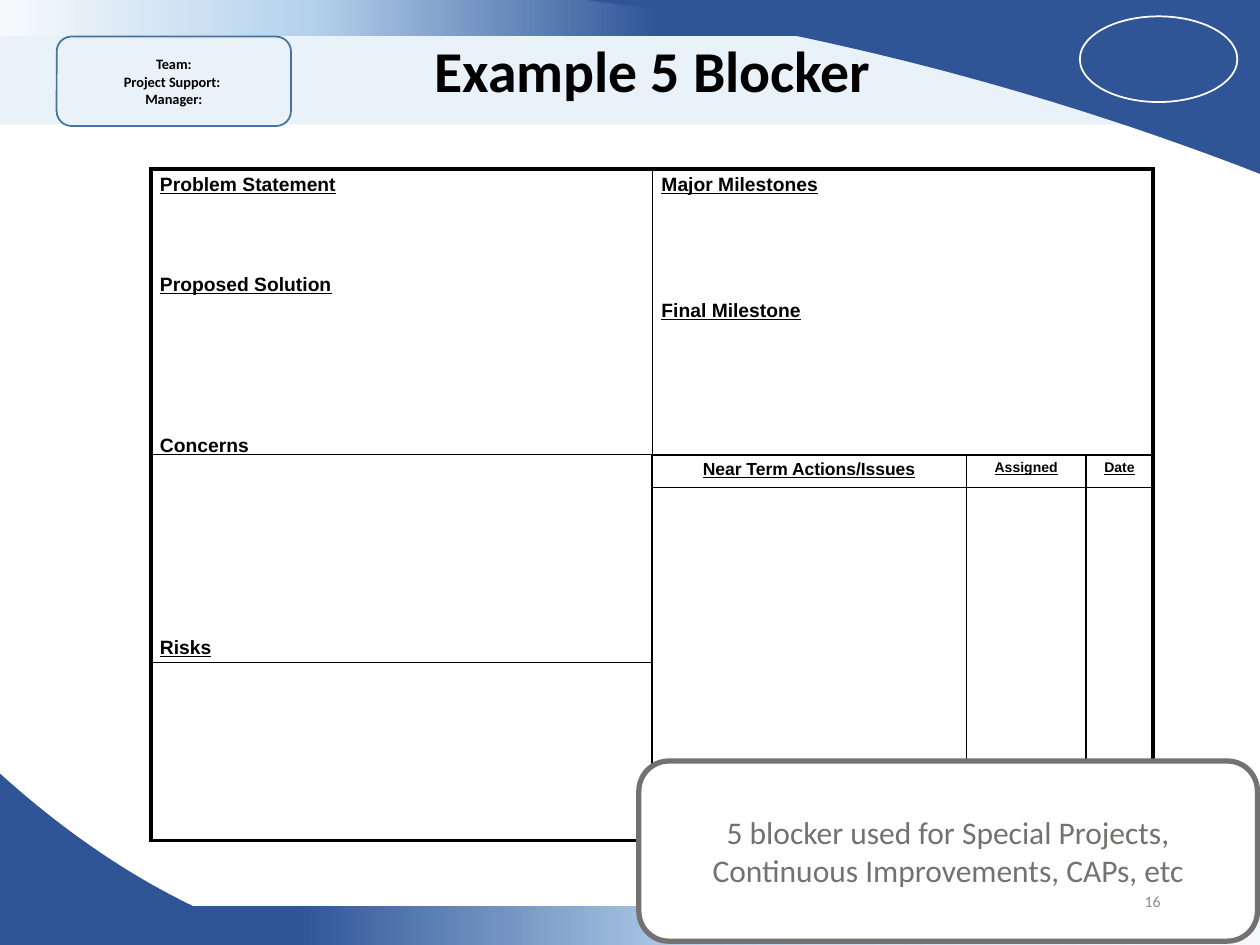
from lxml.etree import SubElement
from pptx import Presentation
from pptx.dml.color import RGBColor
from pptx.enum.shapes import MSO_CONNECTOR, MSO_SHAPE
from pptx.enum.text import MSO_ANCHOR, PP_ALIGN
from pptx.oxml.ns import qn
from pptx.util import Inches, Pt

COLUMNS, ROWS = 100, 75
GRID_STEP = Inches(0.1)
COLORS = {
    "navy": "2F5597", "sky": "B5D2EC", "mist": "F7FAFD", "band": "BDD7EE",
    "white": "FFFFFF", "black": "000000", "outline": "43739E",
    "gray": "767171", "number": "8C8C8C",
}


def grid(*values):
    return [round(value * GRID_STEP) for value in values]


def color(name):
    return RGBColor.from_string(COLORS[name])


def style_shape(shape, fill=None, line=None, width=1):
    shape.shadow.inherit = False
    if fill:
        shape.fill.solid()
        shape.fill.fore_color.rgb = color(fill)
    else:
        shape.fill.background()
    if line:
        shape.line.color.rgb = color(line)
        shape.line.width = Pt(width)
    else:
        shape.line.fill.background()
    return shape


def add_box(slide, kind, box, **style):
    return style_shape(slide.shapes.add_shape(kind, *grid(*box)), **style)


def add_gradient_bar(slide, box, stops):
    shape = add_box(slide, MSO_SHAPE.RECTANGLE, box)
    shape.fill.gradient()
    shape.fill.gradient_angle = 0
    stop_list = shape._element.spPr.find(qn("a:gradFill")).find(qn("a:gsLst"))
    stop_list.clear()
    for percent, name in stops:
        stop = SubElement(stop_list, qn("a:gs"), pos=str(percent * 1000))
        SubElement(stop, qn("a:srgbClr"), val=COLORS[name])


def curve_points(start, first, second, end, steps=40):
    for step in range(steps + 1):
        t = step / steps
        weights = ((1 - t) ** 3, 3 * t * (1 - t) ** 2, 3 * t * t * (1 - t), t ** 3)
        yield tuple(
            round(sum(w * p[axis] for w, p in zip(weights, (start, first, second, end))) * GRID_STEP)
            for axis in (0, 1)
        )


def add_swoosh(slide, corner, *curve):
    builder = slide.shapes.build_freeform(*grid(*corner))
    builder.add_line_segments(list(curve_points(*curve)), close=True)
    style_shape(builder.convert_to_shape(), fill="navy")


def add_rule(slide, left, right, row):
    x1, y, x2 = grid(left, row, right)
    rule = slide.shapes.add_connector(MSO_CONNECTOR.STRAIGHT, x1, y, x2, y)
    rule.line.color.rgb = color("black")
    rule.line.width = Pt(0.5)
    SubElement(rule._element.spPr, qn("a:effectLst"))


def style_font(paragraph, size, name="Calibri", ink="black", bold=False, underline=False):
    font = paragraph.font
    font.size, font.name, font.bold, font.underline = Pt(size), name, bold, underline
    font.color.rgb = color(ink)


def write_text(shape, lines, size, align=PP_ALIGN.CENTER, anchor=MSO_ANCHOR.MIDDLE,
               spacing=None, **font):
    frame = shape.text_frame
    frame.word_wrap = True
    frame.vertical_anchor = anchor
    frame.text = "\n".join(lines)
    for paragraph in frame.paragraphs:
        paragraph.alignment = align
        paragraph.line_spacing = spacing
        style_font(paragraph, size, **font)


def add_text(slide, box, lines, size, **style):
    write_text(slide.shapes.add_textbox(*grid(*box)), lines, size, **style)


def set_borders(cell, widths):
    properties = cell._tc.get_or_add_tcPr()
    for index, (side, width) in enumerate(zip("LRTB", widths)):
        line = SubElement(properties, qn(f"a:ln{side}"), w=str(Pt(width)))
        fill = SubElement(line, qn("a:solidFill"))
        SubElement(fill, qn("a:srgbClr"), val=COLORS["black"])
        properties.insert(index, line)


def add_plain_table(slide, left, top, widths, heights):
    table = slide.shapes.add_table(
        len(heights), len(widths), *grid(left, top, sum(widths), sum(heights))).table
    table.first_row = table.horz_banding = False
    for column, width in zip(table.columns, grid(*widths)):
        column.width = width
    for row, height in zip(table.rows, grid(*heights)):
        row.height = height
    for cell in table.iter_cells():
        cell.fill.background()
        cell.margin_left = cell.margin_right = Inches(0.07)
        cell.margin_top = cell.margin_bottom = Inches(0.04)
        style_font(cell.text_frame.paragraphs[0], 8, "Arial")
    return table


def write_headings(cell, headings):
    frame = cell.text_frame
    frame.text = "\n".join(text for text, _ in headings)
    for paragraph, (_, gap) in zip(frame.paragraphs, headings):
        paragraph.space_before = Pt(gap)
        style_font(paragraph, 11, "Arial", bold=True, underline=True)


def add_blocker_table(slide):
    table = add_plain_table(slide, 12, 13.4, (39.8, 39.7), (53.3,))
    left, right = table.cell(0, 0), table.cell(0, 1)
    write_headings(left, [("Problem Statement", 0), ("Proposed Solution", 45),
                          ("Concerns", 79.5), ("Risks", 103.5)])
    write_headings(right, [("Major Milestones", 0), ("Final Milestone", 60)])
    set_borders(left, (2.25, 1, 2.25, 2.25))
    set_borders(right, (1, 2.25, 2.25, 2.25))


def add_action_table(slide):
    table = add_plain_table(slide, 51.7, 36.1, (25, 9.5, 5.3), (2.6, 25.4, 2.6))
    for cell in table.iter_cells():
        set_borders(cell, (1, 1, 1, 1))
    headers = (("Near Term Actions/Issues", 10, 0.07), ("Assigned", 8, 0.01), ("Date", 8, 0.01))
    for column, (text, size, margin) in enumerate(headers):
        cell = table.cell(0, column)
        cell.margin_left = cell.margin_right = Inches(margin)
        write_text(cell, [text], size, anchor=MSO_ANCHOR.TOP,
                   name="Arial", bold=True, underline=True)


def add_backdrop(slide):
    band = add_box(slide, MSO_SHAPE.RECTANGLE, (0, 0, 92.4, 9.9), fill="band")
    band_color = band._element.spPr.find(qn("a:solidFill"))[0]
    SubElement(band_color, qn("a:alpha"), val="32000")
    add_gradient_bar(slide, (0, -0.4, 64.6, 3.3), [(0, "mist"), (38, "sky"), (81, "navy")])
    add_swoosh(slide, (COLUMNS, -0.4), (43.4, -0.4), (61, 1.7), (80.2, 6.1), (COLUMNS, 13.8))
    add_box(slide, MSO_SHAPE.OVAL, (85.7, 1.3, 12.5, 6.8), line="white")
    add_gradient_bar(slide, (2, 71.9, 98, 3.1), [(22, "navy"), (55, "sky"), (100, "mist")])
    add_swoosh(slide, (0, ROWS), (23.5, ROWS), (16.2, 73), (8.2, 68.8), (0, 61.4))


def main():
    presentation = Presentation()
    presentation.slide_width, presentation.slide_height = grid(COLUMNS, ROWS)
    slide = presentation.slides.add_slide(presentation.slide_layouts[6])
    add_backdrop(slide)
    add_blocker_table(slide)
    add_action_table(slide)
    add_rule(slide, 12, 51.7, 52.6)
    team = add_box(slide, MSO_SHAPE.ROUNDED_RECTANGLE, (4.5, 2.9, 18.6, 7.1), line="outline")
    write_text(team, ["Team:", "Project Support: ", "Manager:"], 8.2, bold=True)
    add_rule(slide, 12, 51.7, 36.1)
    add_text(slide, (6.9, 2.9, 89.8, 7), ["Example 5 Blocker"], 33,
             anchor=MSO_ANCHOR.TOP, spacing=0.9, bold=True)
    callout = add_box(slide, MSO_SHAPE.FLOWCHART_ALTERNATE_PROCESS, (50.7, 60.4, 49.1, 14.3),
                      fill="white", line="gray", width=3)
    write_text(callout, ["5 blocker used for Special Projects, Continuous Improvements, CAPs, etc"],
               18, ink="gray")
    add_text(slide, (70.6, 69.5, 22.5, 4), ["16"], 9, align=PP_ALIGN.RIGHT, ink="number")
    presentation.save("out.pptx")


if __name__ == "__main__":
    main()
